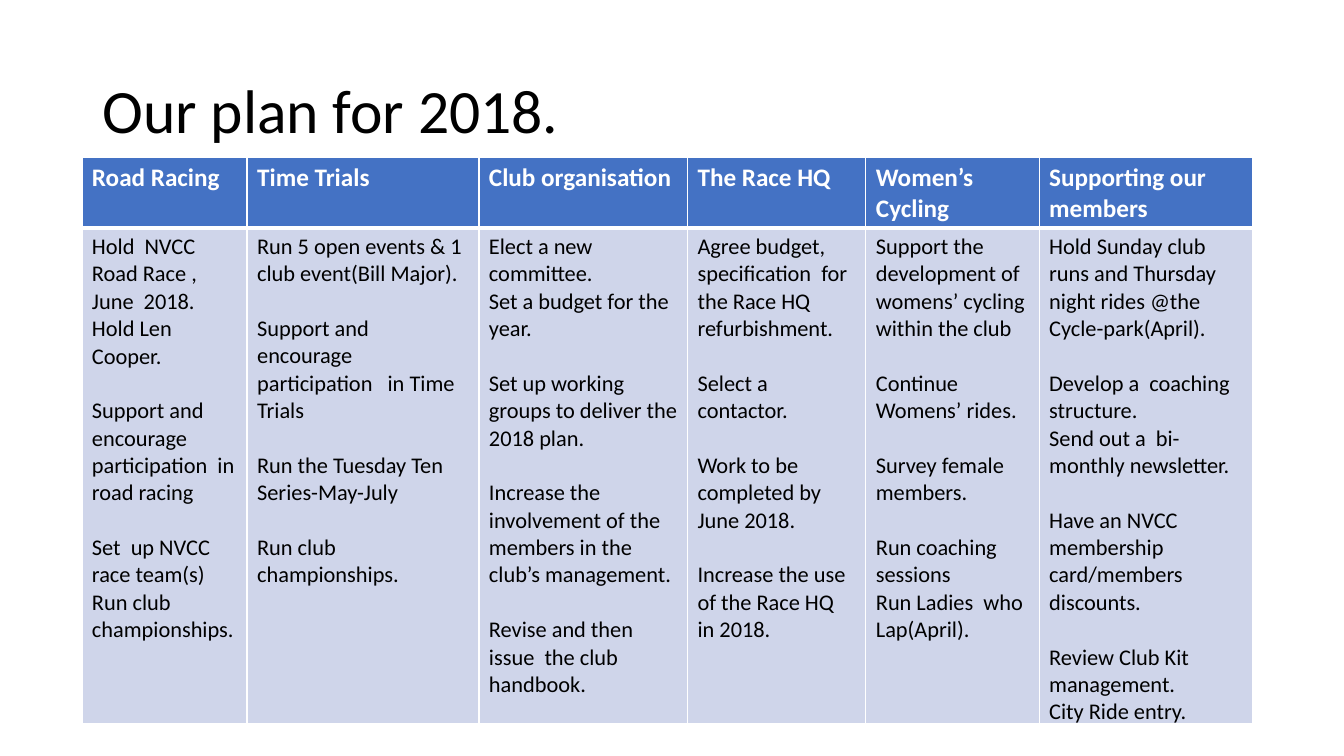
from dataclasses import dataclass

from lxml.etree import SubElement
from pptx import Presentation
from pptx.dml.color import RGBColor
from pptx.enum.text import MSO_ANCHOR
from pptx.oxml.ns import qn
from pptx.slide import Slide
from pptx.table import _Cell
from pptx.text.text import TextFrame
from pptx.util import Pt


@dataclass(frozen=True)
class Theme:
    font: str = "Calibri"
    black: str = "000000"
    white: str = "FFFFFF"
    header_fill: str = "4472C4"
    body_fill: str = "CFD5EA"
    title_size: float = 44
    header_size: float = 18
    body_size: float = 16
    group_gap: float = 19.5
    thin_border: float = 1
    thick_border: float = 3


@dataclass(frozen=True)
class PlanArea:
    """One column of the plan; each group of actions is set apart by a gap."""
    heading: str
    width: float
    groups: tuple[tuple[str, ...], ...]


THEME = Theme()
TABLE_LEFT, TABLE_TOP = 58.5, 112.5
HEADER_HEIGHT, BODY_HEIGHT = 46.8, 328.3

PLAN = [
    PlanArea("Road Racing", 118, (
        ("Hold  NVCC  Road Race , June  2018.", "Hold Len Cooper."),
        ("Support and encourage  participation  in road racing",),
        ("Set  up NVCC race team(s)", "Run club championships."),
    )),
    PlanArea("Time Trials", 165.6, (
        ("Run 5 open events & 1 club event(Bill Major).",),
        ("Support and encourage  participation   in Time Trials",),
        ("Run the Tuesday Ten Series-May-July",),
        ("Run club championships.",),
    )),
    PlanArea("Club organisation", 149, (
        ("Elect a new committee.", "Set a budget for the year."),
        ("Set up working groups to deliver the 2018 plan.",),
        ("Increase the involvement of the  members in the club’s management.",),
        ("Revise and then issue  the club handbook.",),
    )),
    PlanArea("The Race HQ", 127.4, (
        ("Agree budget, specification  for the Race HQ refurbishment.",),
        ("Select a contactor.",),
        ("Work to be completed by June 2018.",),
        ("Increase the use of the Race HQ in 2018.",),
    )),
    PlanArea("Women’s Cycling", 123.8, (
        ("Support the development of womens’ cycling within the club",),
        ("Continue Womens’ rides.",),
        ("Survey female  members.",),
        ("Run coaching sessions", "Run Ladies  who Lap(April)."),
    )),
    PlanArea("Supporting our members", 152.2, (
        ("Hold Sunday club runs and Thursday night rides @the Cycle-park(April).",),
        ("Develop a  coaching structure.", "Send out a  bi-monthly newsletter."),
        ("Have an NVCC membership card/members discounts.",),
        ("Review Club Kit management.", "City Ride entry."),
    )),
]


def format_runs(tf: TextFrame, size: float, color: str, bold: bool = False) -> None:
    for p in tf.paragraphs:
        for r in p.runs:
            r.font.name = THEME.font
            r.font.size = Pt(size)
            r.font.bold = bold
            r.font.color.rgb = RGBColor.from_string(color)


def style_cell(cell: _Cell, fill: str, bottom: float) -> None:
    """Give the cell white borders, with its own bottom width, and a fill."""
    tc_pr = cell._tc.get_or_add_tcPr()
    thin = THEME.thin_border
    for side, width in (("L", thin), ("R", thin), ("T", thin), ("B", bottom)):
        ln = SubElement(tc_pr, qn(f"a:ln{side}"), w=str(Pt(width)))
        solid = SubElement(ln, qn("a:solidFill"))
        SubElement(solid, qn("a:srgbClr"), val=THEME.white)
    cell.fill.solid()
    cell.fill.fore_color.rgb = RGBColor.from_string(fill)


def fill_actions(tf: TextFrame, groups: tuple[tuple[str, ...], ...]) -> None:
    tf.text = "\n".join(action for group in groups for action in group)
    format_runs(tf, THEME.body_size, THEME.black)
    first = 0
    for group in groups[:-1]:
        first += len(group)
        tf.paragraphs[first].space_before = Pt(THEME.group_gap)


def add_title(slide: Slide, text: str) -> None:
    sp = slide.shapes.add_textbox(Pt(66), Pt(28.8), Pt(828), Pt(104.4))
    tf = sp.text_frame
    tf.word_wrap = True
    tf.vertical_anchor = MSO_ANCHOR.MIDDLE
    tf.text = text
    tf.paragraphs[0].line_spacing = 0.9
    format_runs(tf, THEME.title_size, THEME.black)


def add_plan_table(slide: Slide, plan: list[PlanArea]) -> None:
    table = slide.shapes.add_table(
        2, len(plan), Pt(TABLE_LEFT), Pt(TABLE_TOP),
        Pt(sum(area.width for area in plan)), Pt(HEADER_HEIGHT + BODY_HEIGHT),
    ).table
    table.rows[0].height = Pt(HEADER_HEIGHT)
    table.rows[1].height = Pt(BODY_HEIGHT)
    for col, area in enumerate(plan):
        table.columns[col].width = Pt(area.width)
        header, body = table.cell(0, col), table.cell(1, col)
        header.text_frame.text = area.heading
        format_runs(header.text_frame, THEME.header_size, THEME.white, bold=True)
        style_cell(header, THEME.header_fill, THEME.thick_border)
        fill_actions(body.text_frame, area.groups)
        style_cell(body, THEME.body_fill, THEME.thin_border)


def main() -> None:
    prs = Presentation()
    prs.slide_width, prs.slide_height = Pt(960), Pt(540)
    slide = prs.slides.add_slide(prs.slide_layouts[6])
    add_title(slide, "Our plan for 2018.")
    add_plan_table(slide, PLAN)
    prs.save("out.pptx")


if __name__ == "__main__":
    main()
